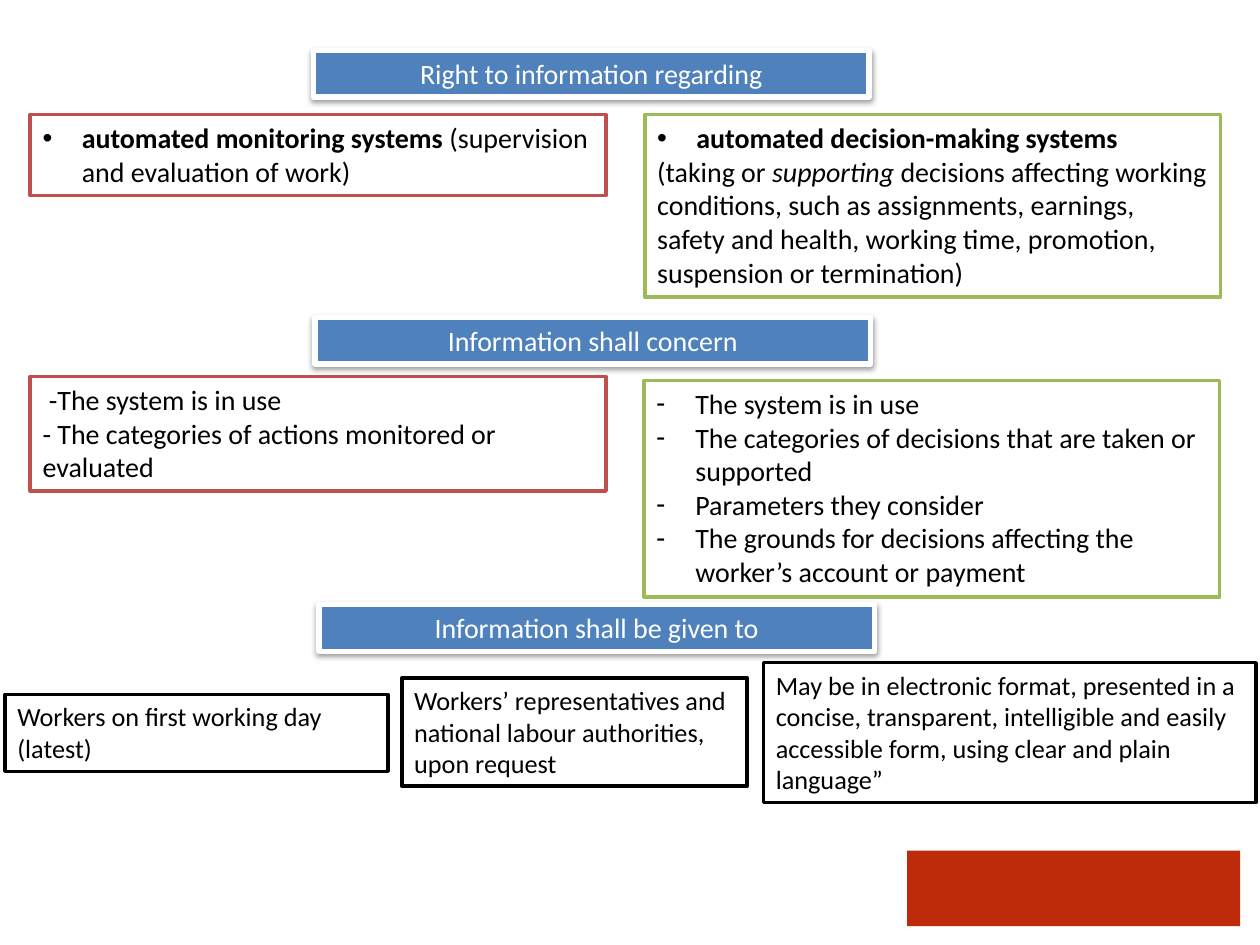
from lxml import etree
from pptx import Presentation
from pptx.dml.color import RGBColor
from pptx.enum.shapes import MSO_SHAPE
from pptx.enum.text import MSO_ANCHOR, MSO_AUTO_SIZE, PP_ALIGN
from pptx.oxml.ns import qn
from pptx.util import Cm, Pt

RECT = MSO_SHAPE.RECTANGLE
TOP = MSO_ANCHOR.TOP
GROW = MSO_AUTO_SIZE.SHAPE_TO_FIT_TEXT
LEFT, MID = PP_ALIGN.LEFT, PP_ALIGN.CENTER

THEME = {
    "font": "Calibri", "large": 16, "small": 15,
    "white": "FFFFFF", "black": "000000", "blue": "4F81BD",
    "red": "C0504D", "green": "9BBB59", "block": "BD2B0B",
}


def draw(slide, x, y, wide, high, fill, edge=None, thick=2):
    box = slide.shapes.add_shape(RECT, Cm(x), Cm(y), Cm(wide), Cm(high))
    box.shadow.inherit = False
    box.fill.solid()
    box.fill.fore_color.rgb = RGBColor.from_string(THEME[fill])
    if edge:
        box.line.color.rgb = RGBColor.from_string(THEME[edge])
        box.line.width = Pt(thick)
    else:
        box.line.fill.background()
    return box


def write(box, text, size="large", ink="black", align=LEFT):
    frame = box.text_frame
    frame.word_wrap = True
    frame.auto_size = GROW
    frame.vertical_anchor = TOP
    for i, (mark, runs) in enumerate(text):
        para = frame.paragraphs[0] if i == 0 else frame.add_paragraph()
        para.alignment = align
        if mark:
            props = para._p.get_or_add_pPr()
            props.set("marL", str(Cm(0.79)))
            props.set("indent", str(-Cm(0.79)))
            face = etree.SubElement(props, qn("a:buFont"))
            face.set("typeface", "Arial")
            etree.SubElement(props, qn("a:buChar")).set("char", mark)
        for words, style in runs:
            run = para.add_run()
            run.text = words
            run.font.name = THEME["font"]
            run.font.size = Pt(THEME[size])
            run.font.color.rgb = RGBColor.from_string(THEME[ink])
            run.font.bold = style == "bold"
            run.font.italic = style == "italic"


deck = Presentation()
deck.slide_width, deck.slide_height = Cm(25.4), Cm(19.05)
slide = deck.slides.add_slide(deck.slide_layouts[6])

draw(slide, 18.29, 17.15, 6.71, 1.52, "block")

panels = [
    (0.61, 2.31, 1.63, "red", [
        ("•", [("automated monitoring systems ", "bold"),
               ("(supervision and evaluation of work)", "")]),
    ]),
    (13, 2.31, 3.68, "green", [
        ("•", [("automated decision-making systems", "bold")]),
        ("", [("(taking or ", ""), ("supporting ", "italic"),
              ("decisions affecting working conditions, such as assignments, "
               "earnings, safety and health, working time, promotion, "
               "suspension or termination)", "")]),
    ]),
    (0.61, 7.59, 2.31, "red", [
        ("", [(" -The system is in use", "")]),
        ("", [("- The categories of actions monitored or evaluated", "")]),
    ]),
    (12.98, 7.67, 4.37, "green", [
        ("-", [(line, "")]) for line in (
            "The system is in use",
            "The categories of decisions that are taken or supported",
            "Parameters they consider",
            "The grounds for decisions affecting the worker’s account or payment",
        )
    ]),
]
for x, y, high, edge, text in panels:
    write(draw(slide, x, y, 11.61, high, "white", edge), text)

notes = [
    (0.1, 14, 7.72, 1.55, ["Workers on first working day (latest)"]),
    (8.1, 13.67, 6.96, 2.18, ["Workers’ representatives and",
                              "national labour authorities, upon request"]),
    (15.39, 13.36, 9.93, 2.82, [
        "May be in electronic format, presented in a concise, transparent, "
        "intelligible and easily accessible form, using clear and plain language”"]),
]
for x, y, wide, high, lines in notes:
    box = draw(slide, x, y, wide, high, "white", "black")
    write(box, [("", [(line, "")]) for line in lines], size="small")

heads = [
    (6.32, 1.02, "Right to information regarding"),
    (6.35, 6.4, "Information shall concern"),
    (6.43, 12.19, "Information shall be given to"),
]
for x, y, title in heads:
    box = draw(slide, x, y, 11.2, 0.94, "blue", "white", 3)
    shade = etree.SubElement(box._element.spPr.find(qn("a:effectLst")), qn("a:outerShdw"))
    for key, value in (("blurRad", Pt(3.1)), ("dist", Pt(1.6)),
                       ("dir", 5400000), ("rotWithShape", 0)):
        shade.set(key, str(value))
    tint = etree.SubElement(shade, qn("a:srgbClr"))
    tint.set("val", THEME["black"])
    etree.SubElement(tint, qn("a:alpha")).set("val", "38000")
    write(box, [("", [(title, "")])], ink="white", align=MID)

deck.save("out.pptx")
